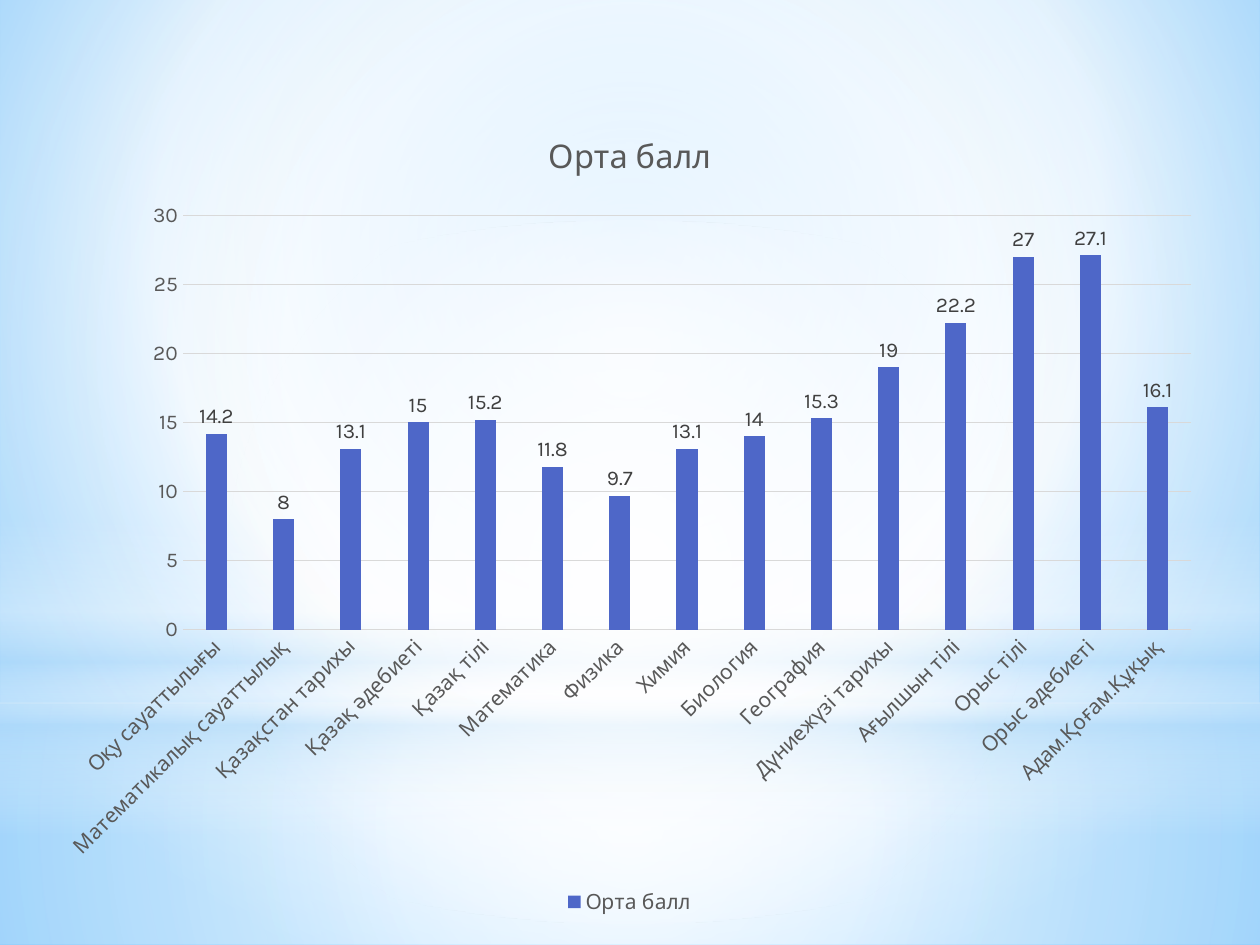
from dataclasses import dataclass
from typing import Any, Optional

import pptx
import pptx.chart.data
import pptx.dml.color
import pptx.enum.chart
import pptx.enum.shapes
import pptx.oxml
import pptx.oxml.ns
import pptx.util


@dataclass(frozen=True)
class Theme:
    font: str = "Karla"
    bar: str = "4E67C8"
    grid: str = "D9D9D9"
    muted: str = "595959"
    value: str = "404040"
    base: str = "000000"
    white: str = "FFFFFF"
    haze: str = "B4DCFA"
    sky: str = "9ED5FF"
    deep_sky: str = "5BB9FF"
    title_size: float = 18.6
    label_size: float = 12
    base_size: float = 10
    line_width: float = 0.75


@dataclass(frozen=True)
class Stop:
    position: int
    color: str
    opacity: int = 100


@dataclass(frozen=True)
class Gradient:
    stops: tuple[Stop, ...]
    focus: tuple[int, int, int, int] = (50, 50, 50, 50)
    angle: Optional[int] = None


@dataclass(frozen=True)
class Area:
    left: float
    top: float
    width: float
    height: float


@dataclass(frozen=True)
class Glow:
    kind: Any
    area: Area
    gradient: Gradient


THEME = Theme()
WIDTH = pptx.util.Inches(10)
HEIGHT = pptx.util.Inches(7.5)
HORIZON = 0.744
CHART_AREA = Area(0.035, 0.112, 0.929, 0.861)
RECTANGLE = pptx.enum.shapes.MSO_SHAPE.RECTANGLE
OVAL = pptx.enum.shapes.MSO_SHAPE.OVAL

BACKGROUND = Gradient(
    (Stop(0, THEME.sky), Stop(60, THEME.white), Stop(100, THEME.deep_sky)),
    focus=(20, 10, 20, 60),
)
GLOWS = (
    Glow(RECTANGLE, Area(0, HORIZON, 1, 1 - HORIZON), Gradient(
        (Stop(0, THEME.white, 91), Stop(37, THEME.white, 76), Stop(100, THEME.haze, 79)))),
    Glow(RECTANGLE, Area(0, 0, 1, HORIZON), Gradient(
        (Stop(0, THEME.white, 89), Stop(48, THEME.white, 62), Stop(100, THEME.haze, 79)))),
    Glow(RECTANGLE, Area(0, 0.55, 1, 0.333), Gradient(
        (Stop(0, THEME.white, 0), Stop(29, THEME.white, 30), Stop(45, THEME.haze, 40),
         Stop(55, THEME.white, 26), Stop(65, THEME.haze, 60), Stop(100, THEME.white, 0)),
        angle=90)),
    Glow(OVAL, Area(0, 0.233, 1, HORIZON), Gradient(
        (Stop(0, THEME.white), Stop(56, THEME.white, 0)))),
)

SERIES_NAME = "Орта балл"
SCORES = {
    "Оқу сауаттылығы": 14.2,
    "Математикалық сауаттылық": 8,
    "Қазақстан тарихы": 13.1,
    "Қазақ әдебиеті": 15,
    "Қазақ тілі": 15.2,
    "Математика": 11.8,
    "Физика": 9.7,
    "Химия": 13.1,
    "Биология": 14,
    "География": 15.3,
    "Дүниежүзі тарихы": 19,
    "Ағылшын тілі": 22.2,
    "Орыс тілі": 27,
    "Орыс әдебиеті": 27.1,
    "Адам.Қоғам.Құқық": 16.1,
}


def rgb(color: str) -> pptx.dml.color.RGBColor:
    return pptx.dml.color.RGBColor.from_string(color)


def place(area: Area) -> tuple[int, int, int, int]:
    return (round(area.left * WIDTH), round(area.top * HEIGHT),
            round(area.width * WIDTH), round(area.height * HEIGHT))


def format_font(font: Any, size: float = THEME.label_size, color: str = THEME.muted) -> None:
    font.name = THEME.font
    font.size = pptx.util.Pt(size)
    font.bold = False
    font.color.rgb = rgb(color)


def write_text(text_frame: Any, text: str, **font_format: Any) -> None:
    text_frame.text = text
    format_font(text_frame.paragraphs[0].runs[0].font, **font_format)


def format_line(line: Any) -> None:
    line.color.rgb = rgb(THEME.grid)
    line.width = pptx.util.Pt(THEME.line_width)


def apply_gradient(fill: Any, element: Any, gradient: Gradient) -> None:
    fill.gradient()
    stops = "".join(
        f'<a:gs pos="{stop.position * 1000}"><a:srgbClr val="{stop.color}">'
        f'<a:alpha val="{stop.opacity * 1000}"/></a:srgbClr></a:gs>'
        for stop in gradient.stops
    )
    if gradient.angle is None:
        sides = " ".join(f'{side}="{share * 1000}"' for side, share in zip("ltrb", gradient.focus))
        direction = f'<a:path path="circle"><a:fillToRect {sides}/></a:path>'
    else:
        direction = f'<a:lin ang="{gradient.angle * 60000}" scaled="0"/>'
    current = element.find(".//" + pptx.oxml.ns.qn("a:gradFill"))
    current.getparent().replace(current, pptx.oxml.parse_xml(
        f'<a:gradFill {pptx.oxml.ns.nsdecls("a")} rotWithShape="1">'
        f"<a:gsLst>{stops}</a:gsLst>{direction}</a:gradFill>"))


def draw_glow(slide: Any, glow: Glow) -> None:
    shape = slide.shapes.add_shape(glow.kind, *place(glow.area))
    shape.shadow.inherit = False
    shape.line.fill.background()
    apply_gradient(shape.fill, shape._element, glow.gradient)


def draw_chart(slide: Any) -> None:
    data = pptx.chart.data.CategoryChartData()
    data.categories = list(SCORES)
    data.add_series(SERIES_NAME, list(SCORES.values()))
    chart = slide.shapes.add_chart(
        pptx.enum.chart.XL_CHART_TYPE.COLUMN_CLUSTERED, *place(CHART_AREA), data).chart
    format_font(chart.font, size=THEME.base_size, color=THEME.base)
    write_text(chart.chart_title.text_frame, SERIES_NAME, size=THEME.title_size)
    chart.chart_title.include_in_layout = False

    chart.has_legend = True
    chart.legend.position = pptx.enum.chart.XL_LEGEND_POSITION.BOTTOM
    chart.legend.include_in_layout = False
    format_font(chart.legend.font)

    for axis in (chart.category_axis, chart.value_axis):
        axis.major_tick_mark = pptx.enum.chart.XL_TICK_MARK.NONE
        axis.minor_tick_mark = pptx.enum.chart.XL_TICK_MARK.NONE
        format_font(axis.tick_labels.font)
    format_line(chart.category_axis.format.line)
    chart.category_axis._element.txPr.bodyPr.set("rot", str(-45 * 60000))
    chart.value_axis.format.line.fill.background()
    chart.value_axis.minimum_scale = 0
    chart.value_axis.maximum_scale = 30
    chart.value_axis.major_unit = 5
    format_line(chart.value_axis.major_gridlines.format.line)

    plot = chart.plots[0]
    plot.vary_by_categories = False
    plot.gap_width = 219
    plot.overlap = -27
    series = plot.series[0]
    series.format.fill.solid()
    series.format.fill.fore_color.rgb = rgb(THEME.bar)
    labels = series.data_labels
    labels.show_value = True
    labels.position = pptx.enum.chart.XL_LABEL_POSITION.OUTSIDE_END
    format_font(labels.font, color=THEME.value)


def main() -> None:
    presentation = pptx.Presentation()
    presentation.slide_width = WIDTH
    presentation.slide_height = HEIGHT
    slide = presentation.slides.add_slide(presentation.slide_layouts[6])
    apply_gradient(slide.background.fill, slide._element, BACKGROUND)
    for glow in GLOWS:
        draw_glow(slide, glow)
    draw_chart(slide)
    presentation.save("out.pptx")


if __name__ == "__main__":
    main()
